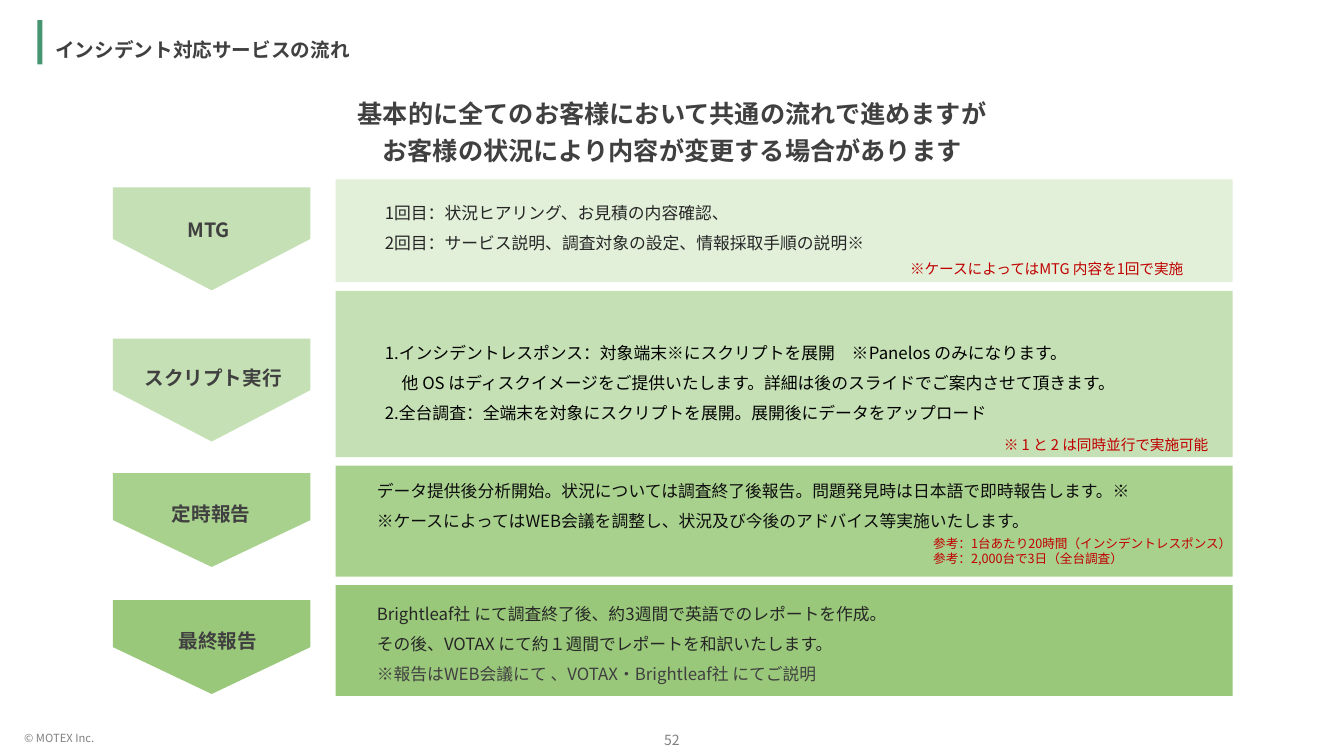
"""Build the incident response service flow slide."""
from dataclasses import dataclass

from lxml import etree
from pptx import Presentation
from pptx import util as u
from pptx.dml.color import RGBColor
from pptx.enum import shapes, text
from pptx.oxml.ns import qn


@dataclass(frozen=True)
class Theme:
    font: str = "Noto Sans CJK JP"
    accent: str = "479471"
    palest: str = "E2F0D9"
    pale: str = "C5E0B4"
    medium: str = "A9D18E"
    deep: str = "9AC87A"
    heading: str = "404040"
    body: str = "262626"
    dark: str = "0D0D0D"
    black: str = "000000"
    note: str = "C00000"
    footer: str = "808080"
    lead_size: float = 18
    title_size: float = 14
    body_size: float = 12
    note_size: float = 10.5
    number_size: float = 10
    reference_size: float = 9
    footer_size: float = 8


THEME = Theme()
COLUMNS, ROWS = 133.33, 75
CELL = u.Inches(0.1)

TITLE = "インシデント対応サービスの流れ"
LEAD = ["基本的に全てのお客様において共通の流れで進めますが",
        "お客様の状況により内容が変更する場合があります"]
COPYRIGHT = "© MOTEX Inc."
PAGE_NUMBER = "52"

STAGES = [
    dict(label="MTG", label_middle=20.7, label_top=21.1,
         arrow_middle=23.7, arrow_length=10.2, arrow_fill=THEME.pale,
         panel_rows=10.2, panel_fill=THEME.palest,
         body_at=(37.2, 18.6, 89.3, 6.8), body_color=THEME.body,
         body=["1回目：状況ヒアリング、お見積の内容確認、",
               "2回目：サービス説明、調査対象の設定、情報採取手順の説明※"],
         note=["※ケースによってはMTG 内容を1回で実施"],
         note_at=(89.3, 25.3, 30.7, 2.8), note_format=dict(wrap=False)),
    dict(label="スクリプト実行", label_middle=21.15, label_top=35.8,
         arrow_middle=38.7, arrow_length=10.2, arrow_fill=THEME.pale,
         panel_rows=16.5, panel_fill=THEME.pale,
         body_at=(37.2, 32.5, 81.9, 9.9), body_color=THEME.black,
         body=["1.インシデントレスポンス：対象端末※にスクリプトを展開　※Panelos のみになります。",
               "　他 OS はディスクイメージをご提供いたします。詳細は後のスライドでご案内させて頂きます。",
               "2.全台調査：全端末を対象にスクリプトを展開。展開後にデータをアップロード"],
         note=["※ 1 と 2 は同時並行で実施可能"],
         note_at=(98.6, 41.9, 24.8, 3.4), note_format=dict(spacing=1.5)),
    dict(label="定時報告", label_middle=20.95, label_top=49.3,
         arrow_middle=51.6, arrow_length=9.3, arrow_fill=THEME.medium,
         panel_rows=11, panel_fill=THEME.medium,
         body_at=(36.4, 46.2, 84.3, 6.8), body_color=THEME.dark,
         body=["データ提供後分析開始。状況については調査終了後報告。問題発見時は日本語で即時報告します。※",
               "※ケースによってはWEB会議を調整し、状況及び今後のアドバイス等実施いたします。"],
         note=["参考：1台あたり20時間（インシデントレスポンス）",
               "参考：2,000台で3日（全台調査）"],
         note_at=(91.6, 52.7, 33, 4), note_format=dict(size=THEME.reference_size)),
    dict(label="最終報告", label_middle=21.6, label_top=61.9,
         arrow_middle=64.2, arrow_length=9.3, arrow_fill=THEME.deep,
         panel_rows=11, panel_fill=THEME.deep,
         body_at=(36.4, 58.4, 84.3, 9.8), body_color=THEME.body,
         body=["Brightleaf社 にて調査終了後、約3週間で英語でのレポートを作成。",
               "その後、VOTAX にて約１週間でレポートを和訳いたします。",
               ("※報告はWEB会議にて 、VOTAX・Brightleaf社 にてご説明", THEME.heading)],
         note=[], note_at=None, note_format={}),
]

PANEL_LEFT, PANEL_TOP, PANEL_COLUMNS, PANEL_GAP = 33.3, 17.8, 89, 0.85
ARROW_MIDDLE, ARROW_BREADTH = 21, 19.6
LABEL_COLUMNS, LABEL_ROWS = 19.9, 3.4


def place(at):
    return [u.Emu(round(length * CELL)) for length in at]


def add_block(page, kind, at, fill, rotation=0):
    block = page.shapes.add_shape(kind, *place(at))
    block.shadow.inherit = False
    block.fill.solid()
    block.fill.fore_color.rgb = RGBColor.from_string(fill)
    block.line.fill.background()
    block.rotation = rotation


def add_text(page, lines, at, size=THEME.body_size, color=THEME.heading,
             bold=False, centered=False, spacing=1.0, wrap=True):
    box = page.shapes.add_textbox(*place(at))
    frame = box.text_frame
    frame.word_wrap = wrap
    for index, line in enumerate(lines):
        words, ink = line if isinstance(line, tuple) else (line, color)
        para = frame.paragraphs[0] if index == 0 else frame.add_paragraph()
        para.alignment = text.PP_ALIGN.CENTER if centered else text.PP_ALIGN.LEFT
        para.line_spacing = spacing
        span = para.add_run()
        span.text = words
        span.font.size = u.Pt(size)
        span.font.bold = bold
        span.font.color.rgb = RGBColor.from_string(ink)
        span.font.name = THEME.font
        etree.SubElement(span.font._element, qn("a:ea"), typeface=THEME.font)


def add_stage(page, stage, panel_top):
    add_block(page, shapes.MSO_SHAPE.RECTANGLE,
              (PANEL_LEFT, panel_top, PANEL_COLUMNS, stage["panel_rows"]),
              stage["panel_fill"])
    length = stage["arrow_length"]
    add_block(page, shapes.MSO_SHAPE.PENTAGON,
              (ARROW_MIDDLE - length / 2, stage["arrow_middle"] - ARROW_BREADTH / 2,
               length, ARROW_BREADTH), stage["arrow_fill"], rotation=90)
    add_text(page, [stage["label"]],
             (stage["label_middle"] - LABEL_COLUMNS / 2, stage["label_top"],
              LABEL_COLUMNS, LABEL_ROWS),
             size=THEME.title_size, bold=True, centered=True)
    add_text(page, stage["body"], stage["body_at"],
             color=stage["body_color"], spacing=1.5)
    if stage["note"]:
        note_format = dict(size=THEME.note_size, color=THEME.note) | stage["note_format"]
        add_text(page, stage["note"], stage["note_at"], **note_format)


def main():
    deck = Presentation()
    deck.slide_width, deck.slide_height = place((COLUMNS, ROWS))
    page = deck.slides.add_slide(deck.slide_layouts[6])

    add_text(page, [COPYRIGHT], (1.4, 72.1, 44.8, 2.4),
             size=THEME.footer_size, color=THEME.footer)
    add_text(page, [PAGE_NUMBER], (COLUMNS / 2 - 5, 72.1, 10, 3),
             size=THEME.number_size, color=THEME.footer, centered=True)
    add_block(page, shapes.MSO_SHAPE.RECTANGLE, (3.7, 2, 0.5, 4.4), THEME.accent)
    add_text(page, [TITLE], (4.5, 2.3, 121.1, 4.1),
             size=THEME.title_size, bold=True, spacing=1.4)
    add_text(page, LEAD, (0, 8.7, COLUMNS, 8.1),
             size=THEME.lead_size, bold=True, centered=True, spacing=1.2)

    panel_top = PANEL_TOP
    for stage in STAGES:
        add_stage(page, stage, panel_top)
        panel_top += stage["panel_rows"] + PANEL_GAP

    deck.save("out.pptx")


if __name__ == "__main__":
    main()
